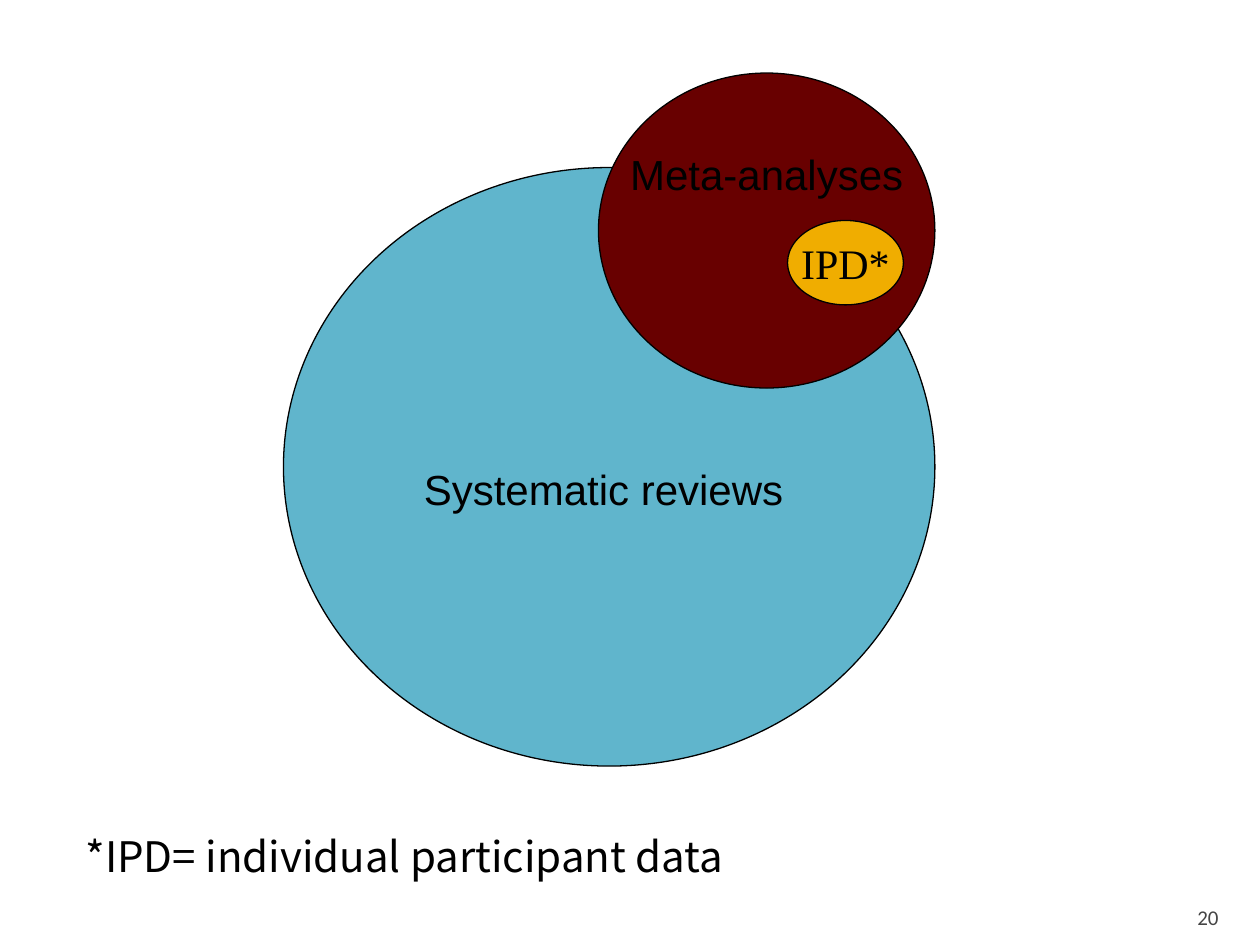
from pptx import Presentation
from pptx import util as u
from pptx.dml.color import RGBColor
from pptx.enum import shapes, text

COLORS = {
    "paper": "FFFFFF",
    "ink": "000000",
    "reviews": "60B5CC",
    "analyses": "680000",
    "ipd": "F0AD00",
    "number": "454545",
}
OVAL = shapes.MSO_SHAPE.OVAL
RECT = shapes.MSO_SHAPE.RECTANGLE
LEFT, CENTER, RIGHT = text.PP_ALIGN.LEFT, text.PP_ALIGN.CENTER, text.PP_ALIGN.RIGHT
MIDDLE, BOTTOM = text.MSO_ANCHOR.MIDDLE, text.MSO_ANCHOR.BOTTOM

# Back to front: preset, (left, top, width, height) in inches, fill, label, label format
PARTS = [
    (OVAL, (2.25, 1.33, 5.17, 4.75), "reviews", None, {}),
    (OVAL, (4.75, 0.58, 2.67, 2.5), "analyses", None, {}),
    (RECT, (0.58, 6.33, 7.33, 0.92), "paper", "*IPD= individual participant data",
     {"font": "Noto Sans CJK JP", "align": LEFT}),
    (RECT, (2.58, 3.42, 4.42, 0.92), "reviews", "Systematic reviews", {}),
    (RECT, (5.25, 1.17, 1.67, 0.42), "analyses", "Meta-analyses", {}),
    (OVAL, (6.25, 1.75, 0.92, 0.67), "ipd", "IPD*", {"font": "Times New Roman"}),
]
PAGE_NUMBER = ("20", (8.97, 7.08, 0.8, 0.3))


def rgb(name):
    return RGBColor.from_string(COLORS[name])


def write(box, words, font="Arial", size=24, color="ink", align=CENTER,
          anchor=MIDDLE, wrap=False):
    frame = box.text_frame
    frame.word_wrap = wrap
    frame.vertical_anchor = anchor
    para = frame.paragraphs[0]
    para.alignment = align
    span = para.add_run()
    span.text = words
    span.font.name = font
    span.font.size = u.Pt(size)
    span.font.color.rgb = rgb(color)


def add_part(page, preset, place, fill, label, style):
    """Add a filled shape; ovals are outlined, label boxes are not."""
    box = page.shapes.add_shape(preset, *map(u.Inches, place))
    box.shadow.inherit = False
    box.fill.solid()
    box.fill.fore_color.rgb = rgb(fill)
    if preset == OVAL:
        box.line.color.rgb = rgb("ink")
        box.line.width = u.Pt(0.75)
    else:
        box.line.fill.background()
    if label:
        write(box, label, **style)


def main():
    deck = Presentation()
    deck.slide_width, deck.slide_height = u.Inches(10), u.Inches(7.5)
    page = deck.slides.add_slide(deck.slide_layouts[6])
    for part in PARTS:
        add_part(page, *part)

    number, place = PAGE_NUMBER
    box = page.shapes.add_textbox(*map(u.Inches, place))
    box.text_frame.margin_bottom = 0
    write(box, number, font="Calibri", size=12, color="number",
          align=RIGHT, anchor=BOTTOM, wrap=True)
    deck.save("out.pptx")


if __name__ == "__main__":
    main()
